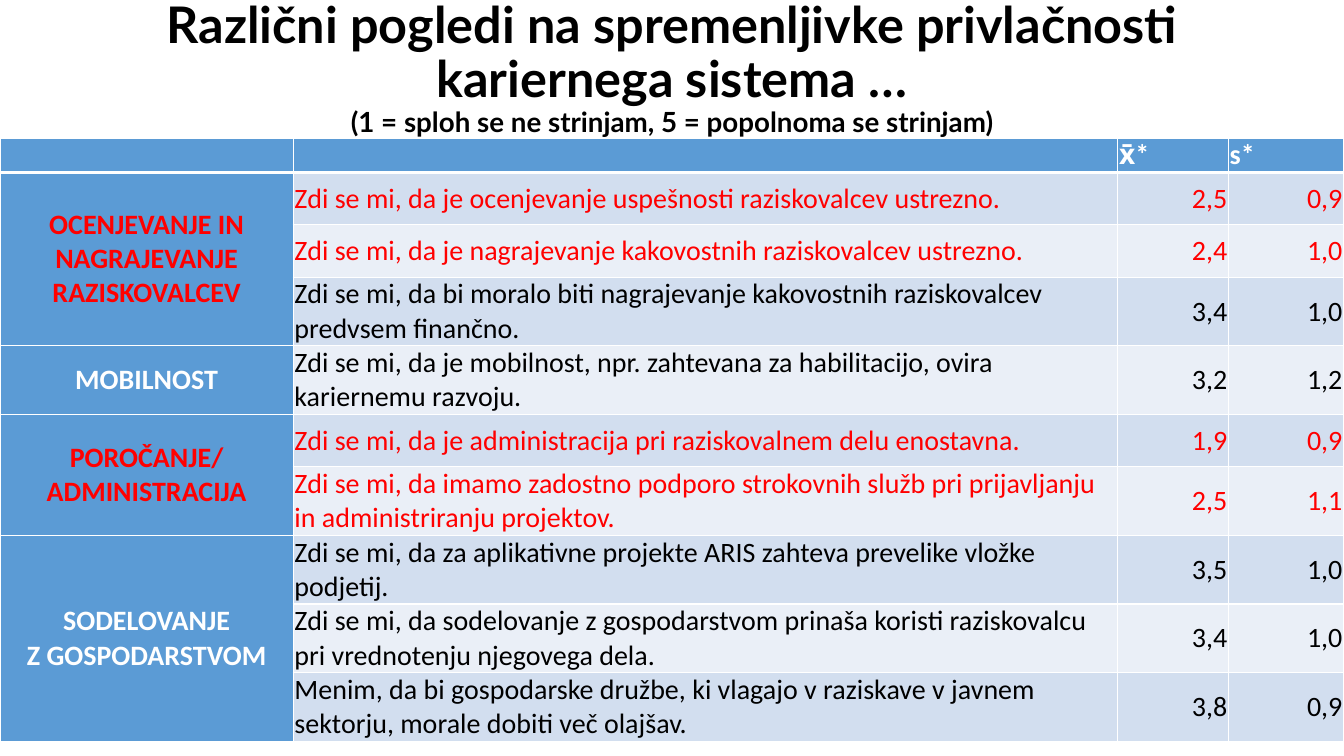
import pptx
import pptx.util
import pptx.dml.color
import pptx.enum.text
import pptx.oxml
import pptx.oxml.ns

Cm = pptx.util.Cm
Pt = pptx.util.Pt
RGBColor = pptx.dml.color.RGBColor
ALIGN = pptx.enum.text.PP_ALIGN
MIDDLE = pptx.enum.text.MSO_ANCHOR.MIDDLE
TOP = pptx.enum.text.MSO_ANCHOR.TOP

BLACK = RGBColor(0x00, 0x00, 0x00)
WHITE = RGBColor(0xFF, 0xFF, 0xFF)
RED = RGBColor(0xFF, 0x00, 0x00)
BLUE = RGBColor(0x5B, 0x9B, 0xD5)
BANDS = (RGBColor(0xD2, 0xDE, 0xEF), RGBColor(0xEA, 0xEF, 0xF7))

COLUMN_WIDTHS = (7.39, 20.78, 2.79, 2.9)
HEADER_HEIGHT, SINGLE_HEIGHT, DOUBLE_HEIGHT = 0.86, 1.32, 1.7
HEADERS = ("", "", "x̄*", "s*")
GROUPS = (
    ("OCENJEVANJE IN NAGRAJEVANJE RAZISKOVALCEV", RED, (
        ("Zdi se mi, da je ocenjevanje uspešnosti raziskovalcev ustrezno.",
         "2,5", "0,9", RED, SINGLE_HEIGHT),
        ("Zdi se mi, da je nagrajevanje kakovostnih raziskovalcev ustrezno.",
         "2,4", "1,0", RED, SINGLE_HEIGHT),
        ("Zdi se mi, da bi moralo biti nagrajevanje kakovostnih raziskovalcev "
         "predvsem finančno.", "3,4", "1,0", BLACK, DOUBLE_HEIGHT))),
    ("MOBILNOST", WHITE, (
        ("Zdi se mi, da je mobilnost, npr. zahtevana za habilitacijo, ovira "
         "kariernemu razvoju.", "3,2", "1,2", BLACK, DOUBLE_HEIGHT),)),
    ("POROČANJE/\nADMINISTRACIJA", RED, (
        ("Zdi se mi, da je administracija pri raziskovalnem delu enostavna.",
         "1,9", "0,9", RED, SINGLE_HEIGHT),
        ("Zdi se mi, da imamo zadostno podporo strokovnih služb pri prijavljanju "
         "in administriranju projektov.", "2,5", "1,1", RED, DOUBLE_HEIGHT))),
    ("SODELOVANJE\nZ GOSPODARSTVOM", WHITE, (
        ("Zdi se mi, da za aplikativne projekte ARIS zahteva prevelike vložke "
         "podjetij.", "3,5", "1,0", BLACK, DOUBLE_HEIGHT),
        ("Zdi se mi, da sodelovanje z gospodarstvom prinaša koristi raziskovalcu "
         "pri vrednotenju njegovega dela.", "3,4", "1,0", BLACK, DOUBLE_HEIGHT),
        ("Menim, da bi gospodarske družbe, ki vlagajo v raziskave v "
         "javnem sektorju, morale dobiti več olajšav.",
         "3,8", "0,9", BLACK, DOUBLE_HEIGHT))),
)


def set_attributes(target, values):
    """Set every named attribute of the target."""
    for name, value in values.items():
        setattr(target, name, value)


def format_font(font, color, values):
    """Apply the colour and the other font values."""
    set_attributes(font, values)
    font.color.rgb = color


def add_title(page):
    """Fill and place the title placeholder."""
    title = page.shapes.title
    set_attributes(title, {"left": Cm(2.33), "top": Cm(0),
                           "width": Cm(29.21), "height": Cm(3.48)})
    set_attributes(title.text_frame, {
        "word_wrap": True, "vertical_anchor": MIDDLE,
        "auto_size": pptx.enum.text.MSO_AUTO_SIZE.NONE})
    para = title.text_frame.paragraphs[0]
    set_attributes(para, {"alignment": ALIGN.CENTER, "line_spacing": 0.9})
    heading = para.add_run()
    heading.text = "Različni pogledi na spremenljivke privlačnosti kariernega sistema …"
    para.add_line_break()
    scale = para.add_run()
    scale.text = "(1 = sploh se ne strinjam, 5 = popolnoma se strinjam)"
    for span, size in ((heading, 36), (scale, 19.8)):
        format_font(span.font, BLACK, {"name": "Lato", "size": Pt(size), "bold": True})


def add_borders(cell, top, bottom):
    """Draw white borders of the given point widths around a cell."""
    properties = cell._tc.get_or_add_tcPr()
    for side, width in (("L", 1), ("R", 1), ("T", top), ("B", bottom)):
        properties.append(pptx.oxml.parse_xml(
            f'<a:ln{side} {pptx.oxml.ns.nsdecls("a")} w="{Pt(width)}">'
            f'<a:solidFill><a:srgbClr val="{WHITE}"/></a:solidFill></a:ln{side}>'))


def fill_cell(cell, text, fill, color, alignment, bold=False, anchor=MIDDLE):
    """Write and format the text of one cell."""
    set_attributes(cell, {"margin_left": Cm(0.03), "margin_right": Cm(0.03),
                          "margin_top": 0, "margin_bottom": 0,
                          "vertical_anchor": anchor, "text": text})
    cell.fill.solid()
    cell.fill.fore_color.rgb = fill
    for para in cell.text_frame.paragraphs:
        para.alignment = alignment
        format_font(para.font, color, {"name": "Calibri", "size": Pt(20), "bold": bold})
        for span in para.runs:
            format_font(span.font, color, {"name": "Calibri", "size": Pt(20), "bold": bold})


def add_survey_table(page):
    """Build the table of statements, means and deviations."""
    row_count = 1 + sum(len(statements) for _, _, statements in GROUPS)
    frame = page.shapes.add_table(row_count, len(COLUMN_WIDTHS), Cm(0), Cm(3.48),
                                  Cm(sum(COLUMN_WIDTHS)), Cm(15.02))
    table = frame.table
    for column, width in zip(table.columns, COLUMN_WIDTHS):
        column.width = Cm(width)
    for index, row in enumerate(table.rows):
        for cell in row.cells:
            add_borders(cell, 3 if index == 1 else 1, 3 if index == 0 else 1)
    table.rows[0].height = Cm(HEADER_HEIGHT)
    for index, header in enumerate(HEADERS):
        fill_cell(table.cell(0, index), header, BLUE, WHITE, ALIGN.JUSTIFY, True, TOP)
    row = 1
    for name, name_color, statements in GROUPS:
        group_cell = table.cell(row, 0)
        if len(statements) > 1:
            group_cell.merge(table.cell(row + len(statements) - 1, 0))
        fill_cell(group_cell, name, BLUE, name_color, ALIGN.CENTER, True)
        for statement, mean, deviation, color, height in statements:
            table.rows[row].height = Cm(height)
            band = BANDS[(row - 1) % 2]
            fill_cell(table.cell(row, 1), statement, band, color, ALIGN.LEFT)
            fill_cell(table.cell(row, 2), mean, band, color, ALIGN.RIGHT)
            fill_cell(table.cell(row, 3), deviation, band, color, ALIGN.RIGHT)
            row += 1


def main():
    """Create the deck with its single survey page."""
    deck = pptx.Presentation()
    set_attributes(deck, {"slide_width": Cm(33.87), "slide_height": Cm(19.05)})
    page = deck.slides.add_slide(deck.slide_layouts[5])
    add_title(page)
    add_survey_table(page)
    deck.save("out.pptx")


if __name__ == "__main__":
    main()
